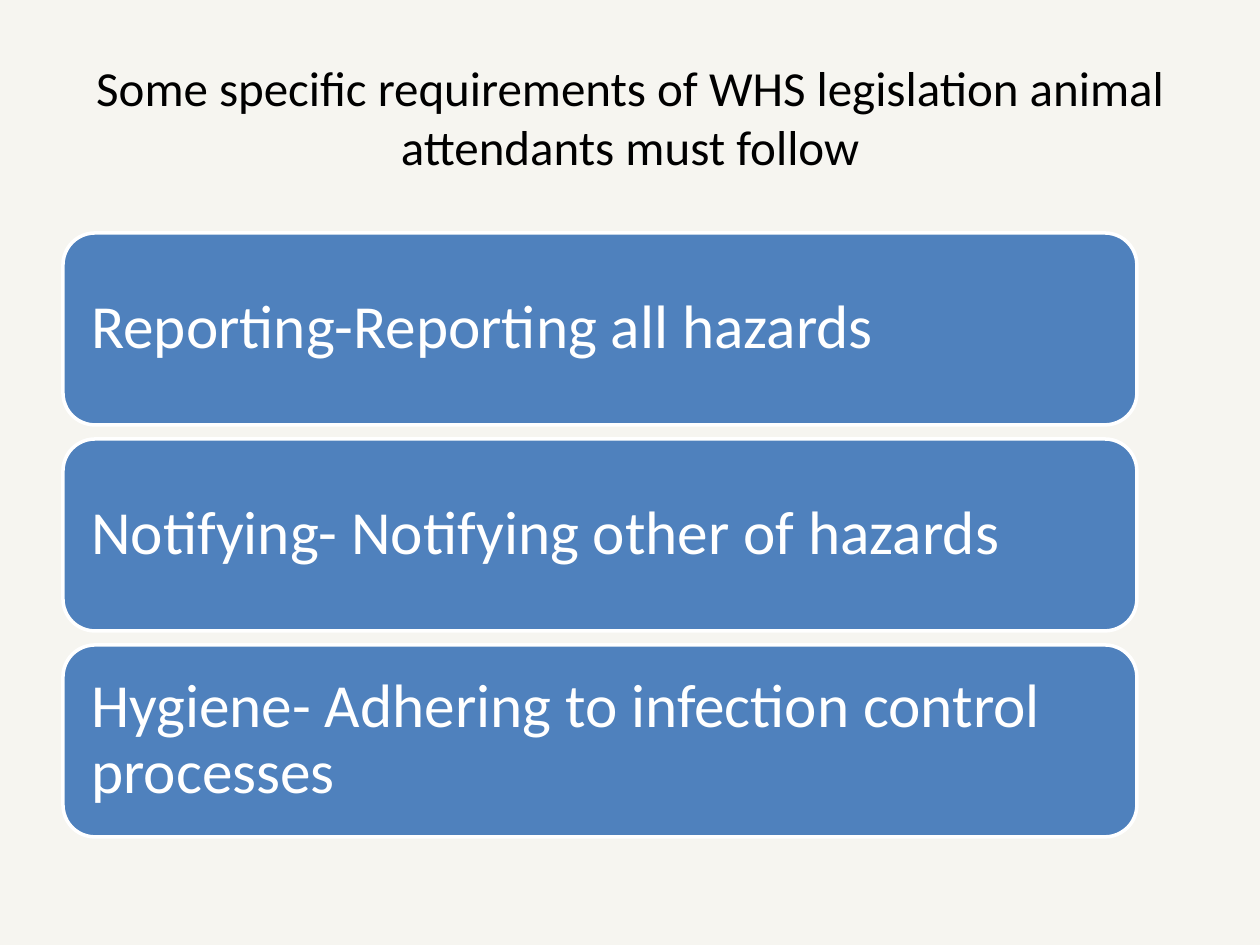
from pptx import Presentation
from pptx.dml.color import RGBColor
from pptx.enum.shapes import MSO_SHAPE as Shape
from pptx.enum.text import MSO_ANCHOR as Anchor, PP_ALIGN as Align
from pptx.util import Pt

TITLE = "Some specific requirements of WHS legislation animal attendants must follow"
DUTIES = [
    "Reporting-Reporting all hazards",
    "Notifying- Notifying other of hazards",
    "Hygiene- Adhering to infection control processes",
]
BACK, BLUE, WHITE, BLACK = "F6F5F0", "4F81BD", "FFFFFF", "000000"
LEFT, TOP, WIDE, HIGH, GAP, PAD = 63, 233, 1074, 192, 14, 19


def px(num):
    return round(num * 914400 / 126)


def paint(fill, color):
    fill.solid()
    fill.fore_color.rgb = RGBColor.from_string(color)


def write(shape, text, size, color, frame, para):
    box = shape.text_frame
    line = box.paragraphs[0]
    line.text = text
    font = {"name": "Calibri", "size": Pt(size)}
    frame = {"word_wrap": True, "vertical_anchor": Anchor.MIDDLE, **frame}
    for item, form in ((box, frame), (line, para), (line.runs[0].font, font)):
        for key, val in form.items():
            setattr(item, key, val)
    line.runs[0].font.color.rgb = RGBColor.from_string(color)


def main():
    """Build the slide of WHS duties for animal attendants."""
    deck = Presentation()
    deck.slide_width, deck.slide_height = px(1260), px(945)
    slide = deck.slides.add_slide(deck.slide_layouts[6])
    paint(slide.background.fill, BACK)

    title = slide.shapes.add_textbox(px(63), px(38), px(1134), px(157))
    write(title, TITLE, 28, BLACK, {}, {"alignment": Align.CENTER})

    sides = ("left", "right", "top", "bottom")
    frame = {f"margin_{side}": px(PAD) for side in sides}
    para = {"alignment": Align.LEFT, "line_spacing": 0.9}
    for row, duty in enumerate(DUTIES):
        top = TOP + row * (HIGH + GAP)
        card = slide.shapes.add_shape(
            Shape.ROUNDED_RECTANGLE, px(LEFT), px(top), px(WIDE), px(HIGH))
        card.shadow.inherit = False
        paint(card.fill, BLUE)
        paint(card.line.fill, WHITE)
        card.line.width = Pt(2)
        write(card, duty, 35, WHITE, frame, para)

    deck.save("out.pptx")


if __name__ == "__main__":
    main()
